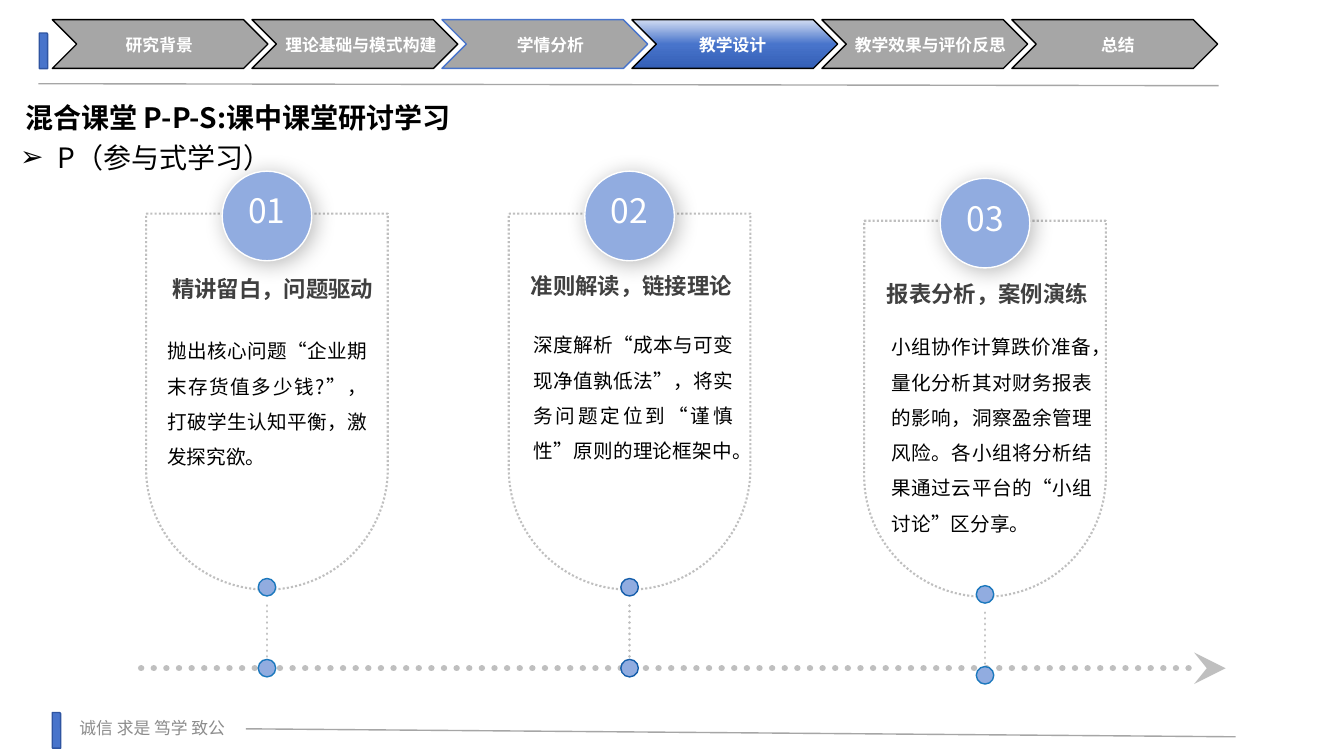
from lxml import etree
from pptx import Presentation
from pptx.dml.color import RGBColor
from pptx.enum.dml import MSO_LINE
from pptx.enum.shapes import MSO_CONNECTOR, MSO_SHAPE
from pptx.enum.text import MSO_ANCHOR, MSO_AUTO_SIZE, PP_ALIGN
from pptx.oxml import parse_xml
from pptx.oxml.ns import nsdecls, qn
from pptx.util import Pt

TOP, MIDDLE = MSO_ANCHOR.TOP, MSO_ANCHOR.MIDDLE
LEFT, CENTER, JUSTIFY = PP_ALIGN.LEFT, PP_ALIGN.CENTER, PP_ALIGN.JUSTIFY
DOTTED = MSO_LINE.ROUND_DOT
NOTO, ARIAL = "Noto Sans CJK SC", "Arial"

TITLE = "混合课堂 P-P-S:课中课堂研讨学习"
SUBTITLE = "P（参与式学习）"
MOTTO = "诚信 求是 笃学 致公"
STEPS = [
    ("研究背景", 52.6, "000000"),
    ("理论基础与模式构建", 196.6, "000000"),
    ("学情分析", 332, "4874CB"),
    ("教学设计", 462.2, "000000"),
    ("教学效果与评价反思", 603.4, "000000"),
    ("总结", 737.3, "000000"),
]
ACTIVE_STEP = "教学设计"
ACTIVE_STOPS = [(0, "D1DCF2"), (50, "4874CB"), (100, "345FB6")]
CARDS = [
    dict(number="01", corner=(104.4, 152.6), dot_line="1B78BD",
         heading="精讲留白，问题驱动", heading_at=(115.9, 193),
         body="抛出核心问题“企业期末存货值多少钱?”，打破学生认知平衡，激发探究欲。",
         body_at=(112.3, 230.4)),
    dict(number="02", corner=(363.4, 152.6), dot_line="155EAB",
         heading="准则解读，链接理论", heading_at=(372.2, 190.8),
         body="深度解析“成本与可变现净值孰低法”，将实务问题定位到“谨慎性”原则的理论框架中。",
         body_at=(373.7, 226.1)),
    dict(number="03", corner=(617.3, 157.7), dot_line="1B78BD",
         heading="报表分析，案例演练", heading_at=(626.4, 196.6),
         body="小组协作计算跌价准备，量化分析其对财务报表的影响，洞察盈余管理风险。"
              "各小组将分析结果通过云平台的“小组讨论”区分享。",
         body_at=(630, 227.5)),
]
CARD_WIDTH, CARD_HEIGHT = 172.6, 268.6
BADGE, DOT = 64, 12.5


def color(value):
    return RGBColor.from_string(value)


def add_shape(slide, preset, left, top, width, height, fill, line, weight=1):
    shape = slide.shapes.add_shape(preset, Pt(left), Pt(top), Pt(width), Pt(height))
    shape.shadow.inherit = False
    shape.fill.solid()
    shape.fill.fore_color.rgb = color(fill)
    shape.line.color.rgb = color(line)
    shape.line.width = Pt(weight)
    return shape


def add_line(slide, start, end, line, weight, dotted=False):
    connector = slide.shapes.add_connector(
        MSO_CONNECTOR.STRAIGHT, *(Pt(value) for value in (*start, *end)))
    connector.line.color.rgb = color(line)
    connector.line.width = Pt(weight)
    properties = connector._element.spPr
    if dotted:
        connector.line.dash_style = DOTTED
        properties.find(qn("a:ln")).set("cap", "rnd")
    etree.SubElement(properties, qn("a:effectLst"))
    return connector


def write(shape, text, size, ink, font=NOTO, bold=False, align=LEFT, anchor=MIDDLE,
          wrap=True, spacing=None, bullet=None):
    frame = shape.text_frame
    frame.auto_size = MSO_AUTO_SIZE.NONE
    frame.word_wrap = wrap
    frame.vertical_anchor = anchor
    frame.text = text
    paragraph = frame.paragraphs[0]
    properties = paragraph._p.get_or_add_pPr()
    if bullet:
        properties.set("marL", str(Pt(27)))
        properties.set("indent", str(-Pt(27)))
        etree.SubElement(properties, qn("a:buFont")).set("typeface", ARIAL)
        etree.SubElement(properties, qn("a:buChar")).set("char", bullet)
    paragraph.alignment = align
    if spacing:
        paragraph.line_spacing = Pt(spacing)
    paragraph.font.size = Pt(size)
    paragraph.font.bold = bold
    paragraph.font.color.rgb = color(ink)
    paragraph.font.name = font
    east_asian = etree.SubElement(properties.find(qn("a:defRPr")), qn("a:ea"))
    east_asian.set("typeface", NOTO)


def add_text(slide, left, top, width, height, text, size, ink, **style):
    box = slide.shapes.add_textbox(Pt(left), Pt(top), Pt(width), Pt(height))
    write(box, text, size, ink, **style)
    return box


def apply_gradient(shape, stops):
    marks = "".join(f'<a:gs pos="{position * 1000}"><a:srgbClr val="{value}"/></a:gs>'
                    for position, value in stops)
    gradient = parse_xml(f'<a:gradFill {nsdecls("a")}><a:gsLst>{marks}</a:gsLst>'
                         '<a:lin ang="5400000" scaled="0"/></a:gradFill>')
    properties = shape._element.spPr
    properties.replace(properties.find(qn("a:solidFill")), gradient)


def add_soft_shadow(shape):
    effects = shape._element.spPr.find(qn("a:effectLst"))
    effects.append(parse_xml(
        f'<a:outerShdw {nsdecls("a")} blurRad="{Pt(16)}" dist="{Pt(3)}" dir="2700000" '
        'algn="tl" rotWithShape="0"><a:srgbClr val="000000"><a:alpha val="28000"/>'
        '</a:srgbClr></a:outerShdw>'))


def add_steps(slide):
    for index, (label, label_left, outline) in enumerate(STEPS):
        left, width = (180 + 135.7 * (index - 1), 147) if index else (37.4, 154)
        chevron = add_shape(slide, MSO_SHAPE.CHEVRON, left, 14.1, width, 34.8,
                            "A6A6A6", outline)
        if label == ACTIVE_STEP:
            apply_gradient(chevron, ACTIVE_STOPS)
        add_text(slide, label_left, 20.9, 122.4, 21.6, label, 12, "FFFFFF",
                 font=ARIAL, bold=True, align=CENTER, wrap=False)


def add_card(slide, card):
    left, top = card["corner"]
    middle = left + CARD_WIDTH / 2
    panel = add_shape(slide, MSO_SHAPE.ROUND_2_SAME_RECTANGLE, left, top,
                      CARD_WIDTH, CARD_HEIGHT, "FFFFFF", "BFBFBF", 1.5)
    panel.adjustments[0], panel.adjustments[1] = 0, 0.5
    panel.line.dash_style = DOTTED
    badge = add_shape(slide, MSO_SHAPE.OVAL, middle - BADGE / 2, top - 30.3,
                      BADGE, BADGE, "91ACE0", "FFFFFF")
    add_soft_shadow(badge)
    add_text(slide, *card["body_at"], 157, 180, card["body"], 14, "000000",
             align=JUSTIFY, anchor=TOP, spacing=25.2)
    add_text(slide, *card["heading_at"], 158.4, 26.6, card["heading"], 16, "404040",
             bold=True, wrap=False)
    add_text(slide, middle - 27, top - 20.2, 54, 36, card["number"], 24, "FFFFFF",
             align=CENTER)
    add_line(slide, (middle, top + 280), (middle, top + 322), "BFBFBF", 2, dotted=True)
    for offset in (260.6, 318.4):
        add_shape(slide, MSO_SHAPE.OVAL, middle - DOT / 2, top + offset, DOT, DOT,
                  "91ACE0", card["dot_line"])


def main():
    presentation = Presentation()
    presentation.slide_width, presentation.slide_height = Pt(960), Pt(540)
    slide = presentation.slides.add_slide(presentation.slide_layouts[5])

    title = slide.shapes.title
    title.left, title.top, title.width, title.height = Pt(10.8), Pt(56.5), Pt(836.6), Pt(43.2)
    write(title, TITLE, 20, "000000", bold=True, anchor=TOP, spacing=36)

    for left, top in ((28.1, 23.6), (37.4, 509)):
        add_shape(slide, MSO_SHAPE.ROUND_1_RECTANGLE, left, top, 6, 25.4, "4874CB", "2E54A1")
    add_line(slide, (27.4, 59.8), (870.5, 61.2), "A6A6A6", 1)
    add_line(slide, (175.7, 520.6), (882.7, 526.3), "A6A6A6", 1)
    add_text(slide, 49.7, 509, 208.8, 21.6, MOTTO, 12, "8C8C8C", font=ARIAL)
    add_steps(slide)

    timeline = add_line(slide, (100.8, 477.3), (875.5, 477.3), "BFBFBF", 4.5, dotted=True)
    arrowhead = etree.SubElement(timeline._element.spPr.find(qn("a:ln")), qn("a:tailEnd"))
    for key, value in (("type", "stealth"), ("w", "lg"), ("len", "lg")):
        arrowhead.set(key, value)
    for card in CARDS:
        add_card(slide, card)

    subtitle = add_text(slide, 11.5, 85.5, 211, 33, SUBTITLE, 20, "000000",
                        anchor=TOP, spacing=36, bullet="➢")
    frame = subtitle.text_frame
    frame.margin_left = frame.margin_top = frame.margin_right = frame.margin_bottom = Pt(2.9)
    presentation.save("out.pptx")


if __name__ == "__main__":
    main()
